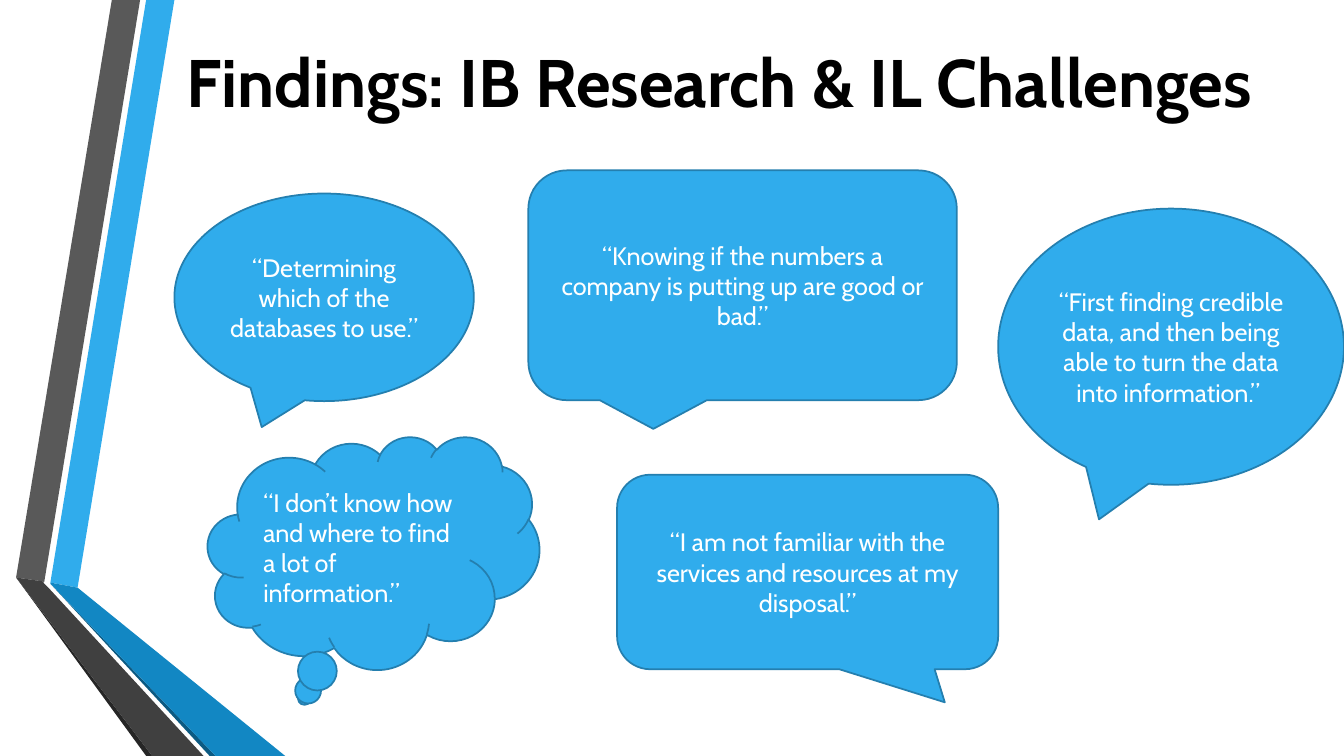
from dataclasses import dataclass
from pptx import Presentation
from pptx.dml.color import RGBColor as RGB
from pptx.enum.shapes import MSO_SHAPE as Kind
from pptx.enum.text import MSO_ANCHOR as Anchor, MSO_AUTO_SIZE as Fit, PP_ALIGN as Align
from pptx.util import Pt

# Content: lengths in px, 100 to the inch
SIZE = (1333, 750)
TITLE = ("Findings: IB Research & IL Challenges ", (173, 27, 1096, 106))

OVAL, BOX, CLOUD = Kind.OVAL_CALLOUT, Kind.ROUNDED_RECTANGULAR_CALLOUT, Kind.CLOUD_CALLOUT
QUOTES = [  # kind, frame, text, alignment, adjustments
    (OVAL, (173, 192, 297, 206),
     "“Determining which of the databases to use.”", Align.CENTER, ()),
    (BOX, (524, 169, 425, 228),
     "“Knowing if the numbers a company is putting up are good or bad.”", Align.CENTER, ()),
    (CLOUD, (206, 433, 329, 231),
     "“I don’t know how and where to find a lot of information.”", Align.LEFT, ()),
    (OVAL, (990, 207, 343, 274),
     "“First finding credible data, and then being able to turn the data into information.” ",
     Align.CENTER, ()),
    (BOX, (612, 471, 378, 193),
     "“I am not familiar with the services and resources at my disposal.”",
     Align.CENTER, (0.36, 0.67, 0.17)),
]

RIBBONS = [  # colour, corners
    ("30ACEC", [(50, 578), (77, 583), (173, 0), (145, 0)]),
    ("595959", [(139, 0), (111, 0), (16, 573), (44, 577)]),
    ("262626", [(16, 573), (145, 750), (151, 750)]),
    ("0C5A82", [(50, 579), (208, 750), (214, 750)]),
    ("1287C3", [(50, 578), (50, 579), (214, 750), (283, 750), (77, 583)]),
    ("404040", [(202, 750), (48, 583), (43, 578), (44, 577), (16, 573), (151, 750)]),
]


@dataclass
class Theme:
    font: str = "Cabin"
    fill: str = "30ACEC"
    edge: str = "247FAF"
    ink: str = "000000"
    pale: str = "FFFFFF"
    head: int = 48
    body: int = 18
    rule: float = 1.25


theme = Theme()
SCALE = 9144


def emu(vals):
    return [v * SCALE for v in vals]


def paint(shape, fill, edge=None):
    shape.shadow.inherit = False
    shape.fill.solid()
    shape.fill.fore_color.rgb = RGB.from_string(fill)
    if edge:
        shape.line.color.rgb = RGB.from_string(edge)
        shape.line.width = Pt(theme.rule)
    else:
        shape.line.fill.background()


def write(shape, text, size, color, align=Align.CENTER, bold=False):
    frame = shape.text_frame
    frame.word_wrap = True
    frame.auto_size = Fit.NONE
    frame.vertical_anchor = Anchor.MIDDLE
    para = frame.paragraphs[0]
    para.alignment = align
    run = para.add_run()
    run.text = text
    font = run.font
    font.name, font.size, font.bold = theme.font, Pt(size), bold
    font.color.rgb = RGB.from_string(color)


def main():
    deck = Presentation()
    deck.slide_width, deck.slide_height = emu(SIZE)
    slide = deck.slides.add_slide(deck.slide_layouts[5])
    shapes = slide.shapes

    # Title
    text, frame = TITLE
    title = shapes.title
    title.left, title.top, title.width, title.height = emu(frame)
    write(title, text, theme.head, theme.ink, bold=True)

    # Folded ribbons on the left edge
    for color, dots in RIBBONS:
        path = shapes.build_freeform(*dots[0], scale=SCALE)
        path.add_line_segments(dots[1:], close=True)
        paint(path.convert_to_shape(), color)

    # Quotes in callouts
    for kind, frame, text, align, adjust in QUOTES:
        quote = shapes.add_shape(kind, *emu(frame))
        for i, val in enumerate(adjust):
            quote.adjustments[i] = val
        paint(quote, theme.fill, theme.edge)
        write(quote, text, theme.body, theme.pale, align)

    deck.save("out.pptx")


if __name__ == "__main__":
    main()
